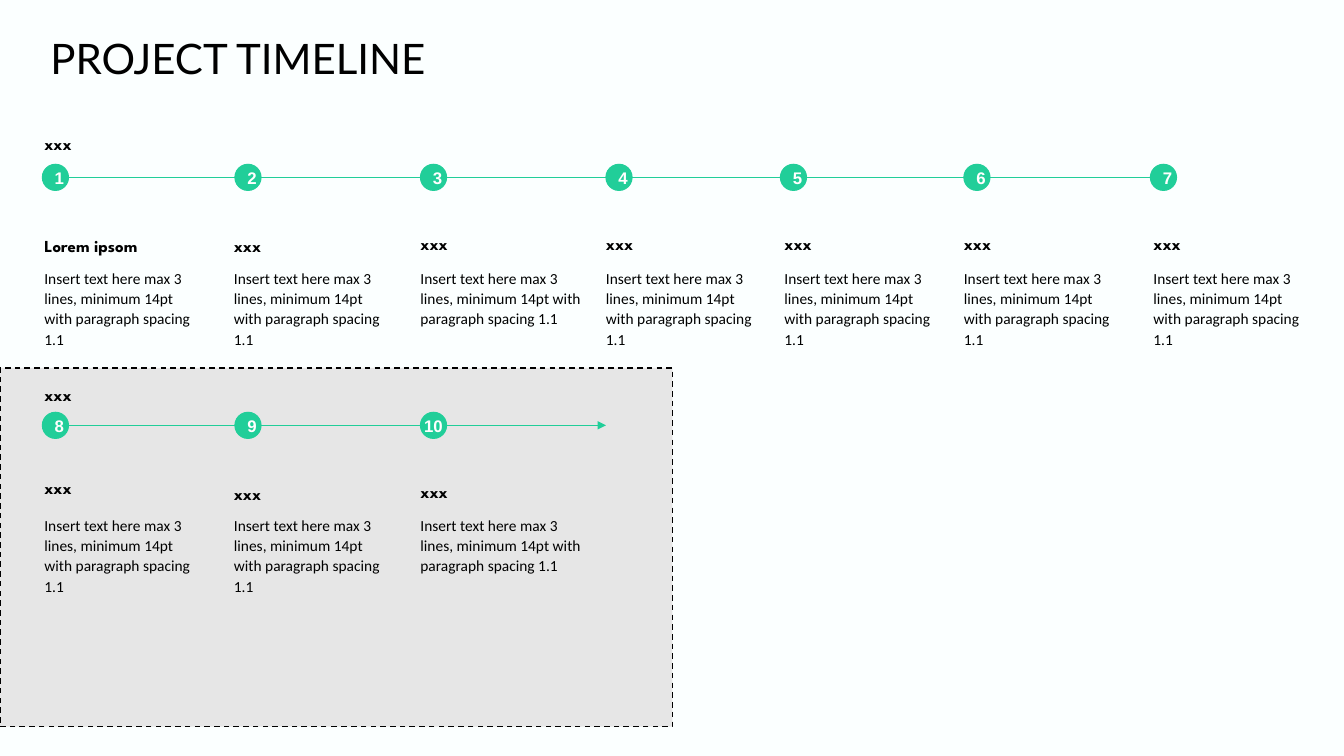
from lxml import etree
from pptx import Presentation
from pptx.dml.color import RGBColor
from pptx.enum import dml, shapes, text
from pptx.oxml.ns import qn
from pptx.util import Inches, Pt

# Content
TITLE = "PROJECT TIMELINE"
DETAIL = "Insert text here max 3 lines, minimum 14pt with paragraph spacing 1.1"
COLORS = {"background": "FBFFFF", "panel": "E6E6E6", "ink": "000000",
          "green": "21CE99", "number": "FFFFFF"}

# Each column: circle left, text left, detail width, heading width
COLUMNS = [
    (0.42, 0.44, 1.46, 1.42),
    (2.33, 2.32, 1.47, 1.27),
    (4.17, 4.17, 1.64, 0.99),
    (6.01, 6.01, 1.53, 1.81),
    (7.74, 7.78, 1.46, 1.59),
    (9.56, 9.56, 1.46, 1.31),
    (11.41, 11.44, 1.47, 1.48),
]
# Each row: axis height, axis end, phase label and its top, first number,
# detail top, step headings with their tops
ROWS = [
    {"axis": 1.76, "end": 11.65, "phase": ("xxx", 1.28), "first": 1, "detail": 2.65,
     "steps": [("Lorem ipsom", 2.29), ("xxx", 2.29)] + [("xxx", 2.27)] * 5},
    {"axis": 4.22, "end": 6.01, "phase": ("xxx", 3.77), "first": 8, "detail": 5.1,
     "steps": [("xxx", 4.69), ("xxx", 4.75), ("xxx", 4.73)]},
]
AXIS_START, CIRCLE, HEADING_HEIGHT, DETAIL_HEIGHT = 0.55, 0.26, 0.3, 0.81


def rgb(name):
    return RGBColor.from_string(COLORS[name])


def write(shape, words, font, size, color="ink", bold=False, spacing=None,
          insets=(0, 0, 0, 0), anchor=text.MSO_ANCHOR.TOP, align=None, wrap=True):
    frame = shape.text_frame
    frame.word_wrap = wrap
    frame.vertical_anchor = anchor
    (frame.margin_left, frame.margin_top,
     frame.margin_right, frame.margin_bottom) = map(Inches, insets)
    paragraph = frame.paragraphs[0]
    paragraph.text = words
    paragraph.alignment = align
    paragraph.line_spacing = spacing
    paragraph.font.name = font
    paragraph.font.size = Pt(size)
    paragraph.font.bold = bold
    paragraph.font.color.rgb = rgb(color)


def add_text(box, *args, grow=True, **style):
    area = slide.shapes.add_textbox(*map(Inches, box))
    write(area, *args, **style)
    if grow:
        area.text_frame.auto_size = text.MSO_AUTO_SIZE.SHAPE_TO_FIT_TEXT


def add_heading(left, top, width, words):
    add_text((left, top, width, HEADING_HEIGHT), words, "League Spartan", 12,
             bold=True, insets=(0, 0.05, 0.1, 0.05), anchor=text.MSO_ANCHOR.BOTTOM)


def add_filled(kind, box, fill, line, weight):
    shape = slide.shapes.add_shape(kind, *map(Inches, box))
    shape.shadow.inherit = False
    shape.fill.solid()
    shape.fill.fore_color.rgb = rgb(fill)
    shape.line.color.rgb = rgb(line)
    shape.line.width = Pt(weight)
    return shape


def add_axis(y, end):
    axis = slide.shapes.add_connector(
        shapes.MSO_CONNECTOR.STRAIGHT, *map(Inches, (AXIS_START, y, end, y)))
    axis.line.color.rgb = rgb("green")
    axis.line.width = Pt(1)
    line = axis._element.spPr.find(qn("a:ln"))
    etree.SubElement(line, qn("a:tailEnd"), type="triangle")
    etree.SubElement(axis._element.spPr, qn("a:effectLst"))


def add_circle(left, y, number):
    circle = add_filled(shapes.MSO_SHAPE.OVAL, (left, y - CIRCLE / 2, CIRCLE, CIRCLE),
                        "green", "green", 0.75)
    # Two digits need the full width of the circle and must stay on one line
    one_digit = number < 10
    side = 0.1 if one_digit else 0
    write(circle, str(number), "Arial", 12, "number", bold=True,
          insets=(side, 0.1, side, 0.1), anchor=text.MSO_ANCHOR.MIDDLE,
          align=text.PP_ALIGN.CENTER, wrap=one_digit)


deck = Presentation()
deck.slide_width, deck.slide_height = Inches(13.33), Inches(7.5)
slide = deck.slides.add_slide(deck.slide_layouts[6])
slide.background.fill.solid()
slide.background.fill.fore_color.rgb = rgb("background")

# Dashed panel behind the second row
panel = add_filled(shapes.MSO_SHAPE.RECTANGLE, (0, 3.65, 6.67, 3.56), "panel", "ink", 1)
panel.line.dash_style = dml.MSO_LINE.DASH

# Timeline rows
for row in ROWS:
    add_axis(row["axis"], row["end"])
    phase, phase_top = row["phase"]
    add_heading(COLUMNS[0][1], phase_top, COLUMNS[0][3], phase)
    steps = zip(COLUMNS, row["steps"])
    for number, (column, (heading, heading_top)) in enumerate(steps, row["first"]):
        circle_left, left, detail_width, heading_width = column
        add_circle(circle_left, row["axis"], number)
        add_heading(left, heading_top, heading_width, heading)
        add_text((left, row["detail"], detail_width, DETAIL_HEIGHT),
                 DETAIL, "Calibri", 11, spacing=1.1)

# Title
add_text((0.5, 0.42, 12.44, 0.45), TITLE, "Lato", 30, spacing=0.8, grow=False)

deck.save("out.pptx")
